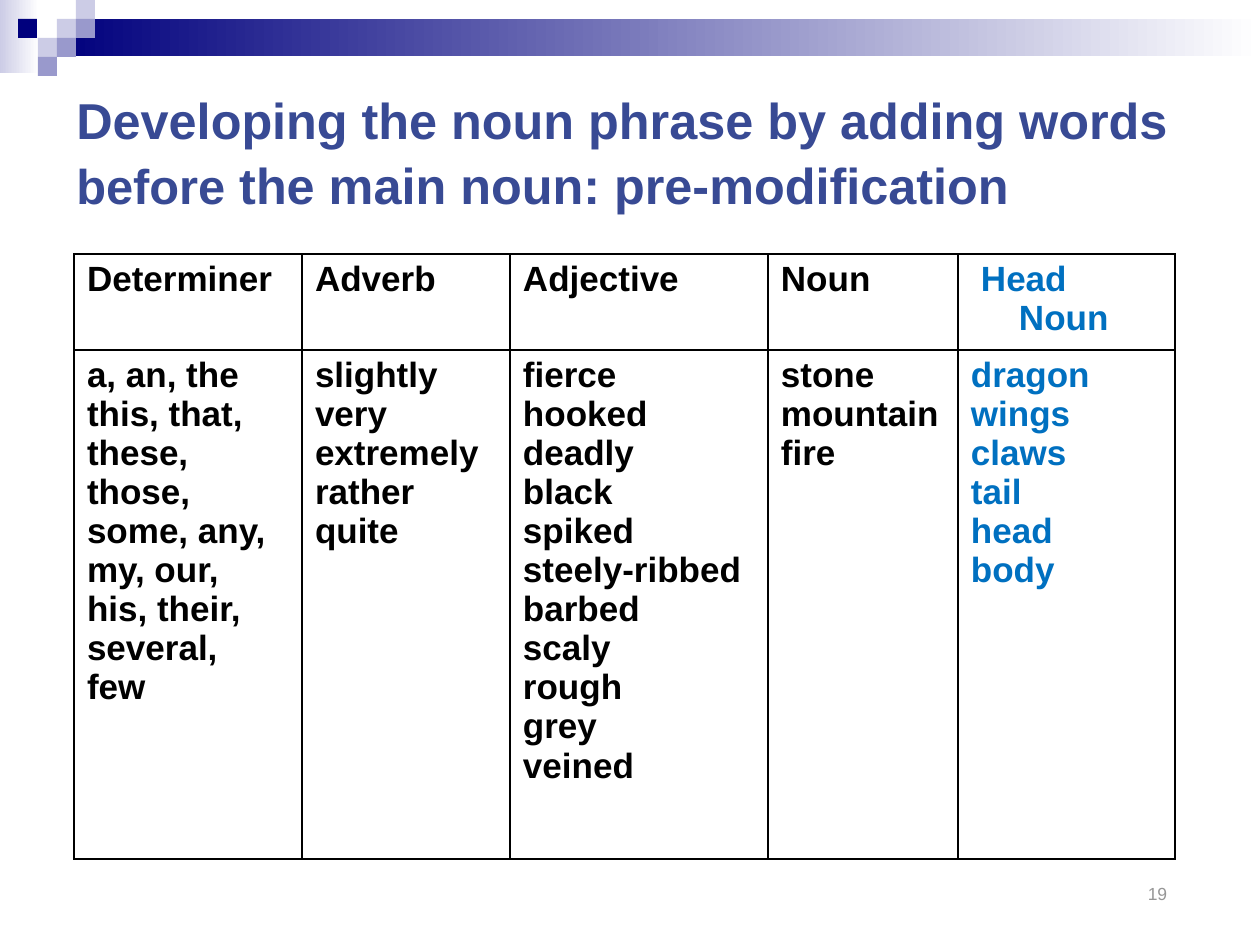
from lxml import etree
from pptx import Presentation
from pptx.dml.color import RGBColor
from pptx.enum.shapes import MSO_SHAPE
from pptx.enum.text import MSO_ANCHOR, PP_ALIGN
from pptx.oxml.ns import qn
from pptx.util import Emu, Pt

RECTANGLE = MSO_SHAPE.RECTANGLE
MIDDLE, BOTTOM = MSO_ANCHOR.MIDDLE, MSO_ANCHOR.BOTTOM
CENTER = PP_ALIGN.CENTER
EMU_PER_INCH, PX_PER_INCH = 914400, 126
BLACK, BLUE, NAVY, WHITE = "000000", "0070C0", "00007D", "FFFFFF"
LAVENDER, PERIWINKLE = "CCCCE6", "9999CC"


def px(length):
    return Emu(length * EMU_PER_INCH // PX_PER_INCH)


def color(value):
    return RGBColor.from_string(value)


deck = Presentation()
deck.slide_width, deck.slide_height = px(1260), px(945)
page = deck.slides.add_slide(deck.slide_layouts[6])

banner = [
    (0, 0, 39, 73, [LAVENDER, WHITE]),
    (57, 19, 1203, 37, [NAVY, WHITE]),
    (57, 19, 19, 19, [LAVENDER]),
    (76, 0, 19, 19, [LAVENDER]),
    (76, 19, 19, 19, [PERIWINKLE]),
    (38, 38, 19, 19, [LAVENDER]),
    (18, 19, 19, 19, [NAVY]),
    (57, 38, 19, 19, [PERIWINKLE]),
    (38, 57, 19, 19, [PERIWINKLE]),
]
for left, top, width, height, colors in banner:
    block = page.shapes.add_shape(RECTANGLE, px(left), px(top), px(width), px(height))
    block.shadow.inherit = False
    block.line.fill.background()
    if len(colors) == 1:
        block.fill.solid()
        block.fill.fore_color.rgb = color(colors[0])
    else:
        block.fill.gradient()
        block.fill.gradient_angle = 0
        for stop, value in zip(block.fill.gradient_stops, colors):
            stop.color.rgb = color(value)

number_box = page.shapes.add_textbox(px(958), px(869), px(399), px(63))
number_frame = number_box.text_frame
number_frame.word_wrap = True
number_frame.vertical_anchor = BOTTOM
number_frame.margin_bottom = px(28)
number_para = number_frame.paragraphs[0]
number_para.text = "19"
number_para.alignment = CENTER
number_para.font.name = "Arial"
number_para.font.size = Pt(10)
number_para.font.color.rgb = color("969696")

title_box = page.shapes.add_textbox(px(64), px(55), px(1134), px(189))
title_frame = title_box.text_frame
title_frame.word_wrap = True
title_frame.vertical_anchor = MIDDLE
title_para = title_frame.paragraphs[0]
title_para.line_spacing = 1.07
title_para.font.name = "Arial"
title_para.font.bold = True
title_para.font.color.rgb = color("384A94")
for text, size in [
    ("Developing the noun phrase by adding words ", 28.8),
    ("before", 27.9),
    (" the main noun: pre-modification", 28.8),
]:
    span = title_para.add_run()
    span.text = text
    span.font.size = Pt(size)

columns = [
    (228, "Determiner", ["a, an, the", "this, that,", "these,", "those,", "some, any,",
                         "my, our,", "his, their,", "several,", "few"]),
    (208, "Adverb", ["slightly", "very", "extremely", "rather", "quite"]),
    (258, "Adjective", ["fierce", "hooked", "deadly", "black", "spiked", "steely-ribbed",
                        "barbed", "scaly", "rough", "grey", "veined"]),
    (190, "Noun", ["stone", "mountain", "fire"]),
    (217, "Head Noun", ["dragon", "wings", "claws", "tail", "head", "body"]),
]
row_heights = [91, 509]
table_width = sum(width for width, heading, words in columns)
table = page.shapes.add_table(
    2, len(columns), px(74), px(254), px(table_width), px(sum(row_heights))
).table
table.first_row = False
table.horz_banding = False
for row, height in zip(table.rows, row_heights):
    row.height = px(height)

for column, (width, heading, words) in enumerate(columns):
    table.columns[column].width = px(width)
    for row, lines in enumerate([[heading], words]):
        cell = table.cell(row, column)
        cell.margin_left = cell.margin_right = px(13)
        cell.margin_top = cell.margin_bottom = px(6)
        cell.text = "\n".join(lines)
        for para in cell.text_frame.paragraphs:
            para.font.name = "Arial"
            para.font.size = Pt(20)
            para.font.bold = True
            para.font.color.rgb = color(BLUE if heading == "Head Noun" else BLACK)
            hanging = 38 if para.text == "Head Noun" else 48
            properties = para._p.get_or_add_pPr()
            properties.set("marL", str(px(48)))
            properties.set("indent", str(-px(hanging)))
        cell_properties = cell._tc.get_or_add_tcPr()
        for side in ("a:lnL", "a:lnR", "a:lnT", "a:lnB"):
            border = etree.SubElement(cell_properties, qn(side), w=str(Pt(1)))
            border_fill = etree.SubElement(border, qn("a:solidFill"))
            etree.SubElement(border_fill, qn("a:srgbClr"), val=BLACK)
        cell.fill.background()

deck.save("out.pptx")
